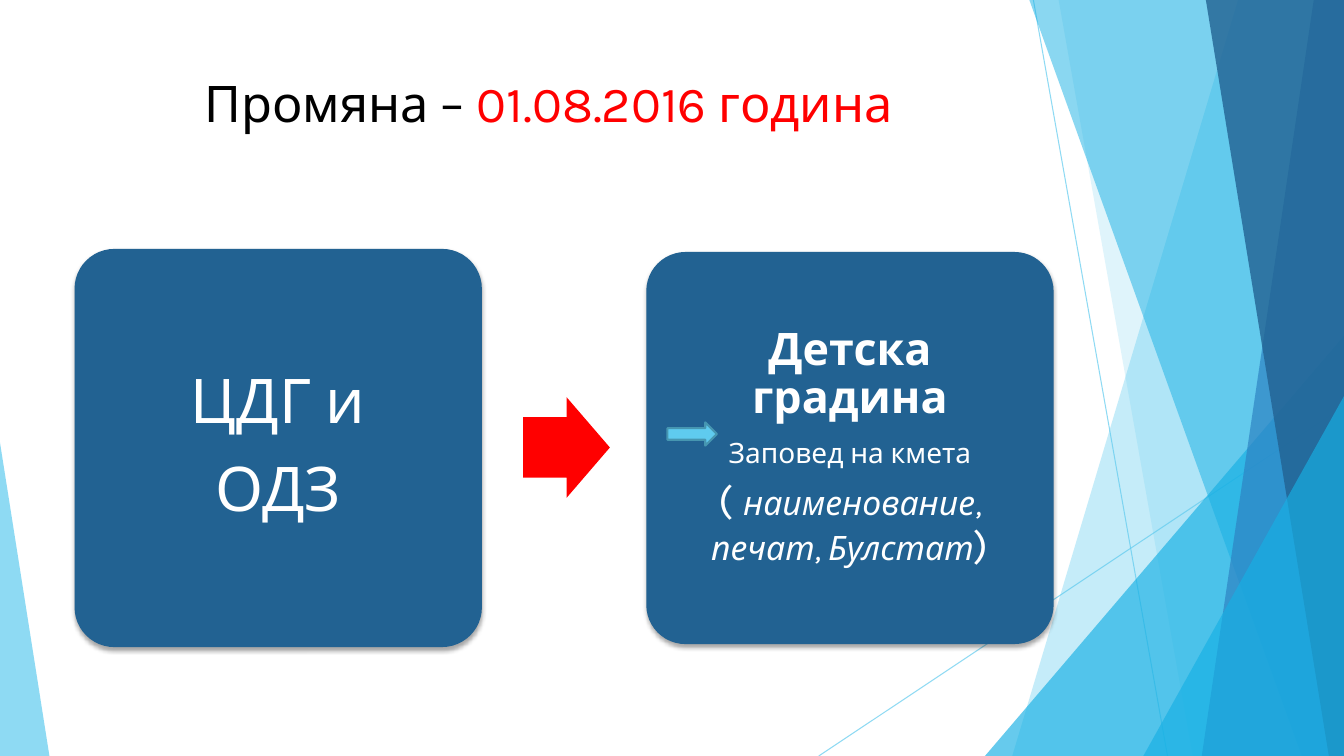
from dataclasses import dataclass
from typing import Optional

from lxml.etree import SubElement
from pptx import Presentation
from pptx.dml.color import RGBColor
from pptx.dml.fill import FillFormat
from pptx.enum.shapes import MSO_CONNECTOR as Connector, MSO_SHAPE as Preset
from pptx.enum.text import MSO_ANCHOR as Anchor, PP_ALIGN as Align
from pptx.oxml.ns import qn
from pptx.shapes.autoshape import Shape
from pptx.slide import Slide
from pptx.text.text import TextFrame
from pptx.util import Emu, Inches, Pt

WIDTH, HEIGHT = Inches(13.33), Inches(7.5)
FONT = "Karla"
SKY, AZURE, BLUE, NAVY = "5FCBEF", "17B0E4", "2E83C3", "226292"
RED, WHITE, BLACK = "FF0000", "FFFFFF", "000000"


@dataclass(frozen=True)
class Area:
    """Percentages of the slide's width and height."""
    left: float
    top: float
    width: float
    height: float

    def emu(self) -> tuple[Emu, Emu, Emu, Emu]:
        return across(self.left), down(self.top), across(self.width), down(self.height)


@dataclass(frozen=True)
class Ray:
    start: tuple[float, float]
    end: tuple[float, float]


@dataclass(frozen=True)
class Band:
    top_x: float
    bottom_x: float
    color: str
    alpha: int


@dataclass(frozen=True)
class Block:
    kind: Preset
    area: Area
    color: str
    adjustments: tuple[float, ...] = ()
    alpha: int = 100
    outline: Optional[str] = None


@dataclass(frozen=True)
class Words:
    text: str
    size: float
    color: str = WHITE
    bold: bool = False
    italic: bool = False


@dataclass(frozen=True)
class Card:
    area: Area
    inset: float
    paragraphs: list[list[Words]]


RAYS = [Ray((76.89, 0), (86.87, 100)), Ray((100, 53.73), (60.92, 100))]
FACETS = [
    Band(92.12, 75.32, SKY, 36),
    Band(78.77, 88.75, SKY, 20),
    Block(Preset.ISOSCELES_TRIANGLE, Area(73.29, 44.4, 26.71, 55.6), AZURE, (1,), 66),
    Band(76.59, 96.85, AZURE, 50),
    Band(97.75, 89.42, BLUE, 70),
    Band(89.72, 98.87, NAVY, 80),
    Block(Preset.ISOSCELES_TRIANGLE, Area(85.07, 52.4, 14.93, 47.6), AZURE, (1,), 66),
    Block(Preset.ISOSCELES_TRIANGLE, Area(0, 58.53, 3.68, 41.47), SKY, (0,), 70),
]
TITLE_AREA = Area(5.55, 8.93, 70.52, 19.2)
TITLE = [Words("Промяна – ", 36, BLACK), Words("01.08.2016 година", 36, RED)]
CARDS = [
    Card(Area(5.55, 32.93, 30.31, 52.67), 0.26,
         [[Words("ЦДГ и", 44)], [Words("ОДЗ", 44)]]),
    Card(Area(48.09, 33.33, 30.31, 51.87), 0.24,
         [[Words("Детска градина", 32, bold=True)],
          [Words("Заповед на кмета", 20)],
          [Words("( ", 30), Words("наименование, печат, Булстат", 24, italic=True),
           Words(")", 30)]]),
]
ARROWS = [
    Block(Preset.RIGHT_ARROW, Area(38.93, 52.53, 6.45, 13.33), RED, (0.6, 0.5)),
    Block(Preset.RIGHT_ARROW, Area(49.66, 55.87, 3.68, 3.07), SKY, outline="4696B1"),
]


def across(share: float) -> Emu:
    return Emu(round(WIDTH * share / 100))


def down(share: float) -> Emu:
    return Emu(round(HEIGHT * share / 100))


def rgb(color: str) -> RGBColor:
    return RGBColor.from_string(color)


def paint(fill: FillFormat, color: str, alpha: int = 100) -> None:
    fill.solid()
    fill.fore_color.rgb = rgb(color)
    if alpha < 100:
        tint = fill._xPr.find(qn("a:solidFill")).find(qn("a:srgbClr"))
        SubElement(tint, qn("a:alpha"), val=str(alpha * 1000))


def draw_ray(slide: Slide, ray: Ray) -> None:
    (x1, y1), (x2, y2) = ray.start, ray.end
    line = slide.shapes.add_connector(
        Connector.STRAIGHT, across(x1), down(y1), across(x2), down(y2))
    line.line.width = Pt(0.75)
    paint(line.line.fill, SKY, 70)
    SubElement(line._element.spPr, qn("a:effectLst"))


def draw_band(slide: Slide, band: Band) -> None:
    builder = slide.shapes.build_freeform(across(band.top_x), 0)
    builder.add_line_segments(
        [(WIDTH, 0), (WIDTH, HEIGHT), (across(band.bottom_x), HEIGHT)], close=True)
    facet = builder.convert_to_shape()
    facet.shadow.inherit = False
    paint(facet.fill, band.color, band.alpha)
    facet.line.fill.background()


def draw_block(slide: Slide, block: Block) -> Shape:
    shape = slide.shapes.add_shape(block.kind, *block.area.emu())
    shape.shadow.inherit = False
    for index, value in enumerate(block.adjustments):
        shape.adjustments[index] = value
    paint(shape.fill, block.color, block.alpha)
    if block.outline:
        paint(shape.line.fill, block.outline)
        shape.line.width = Pt(1.5)
    else:
        shape.line.fill.background()
    return shape


def cast_shadow(shape: Shape) -> None:
    effects = shape._element.spPr.find(qn("a:effectLst"))
    shadow = SubElement(effects, qn("a:outerShdw"), blurRad=str(Pt(3)),
                        dist=str(Pt(2)), dir="5400000", rotWithShape="0")
    tint = SubElement(shadow, qn("a:srgbClr"), val=BLACK)
    SubElement(tint, qn("a:alpha"), val="35000")


def write(frame: TextFrame, paragraphs: list[list[Words]], spacing: float) -> None:
    frame.word_wrap = True
    for index, pieces in enumerate(paragraphs):
        paragraph = frame.add_paragraph() if index else frame.paragraphs[0]
        paragraph.alignment = Align.CENTER
        paragraph.line_spacing = spacing
        if index < len(paragraphs) - 1:
            paragraph.space_after = Pt(0.35 * pieces[0].size)
        for piece in pieces:
            run = paragraph.add_run()
            run.text = piece.text
            run.font.name = FONT
            run.font.size = Pt(piece.size)
            run.font.bold = piece.bold
            run.font.italic = piece.italic
            run.font.color.rgb = rgb(piece.color)


def draw_card(slide: Slide, card: Card) -> None:
    shape = draw_block(slide, Block(Preset.ROUNDED_RECTANGLE, card.area, NAVY, (0.1,)))
    cast_shadow(shape)
    frame = shape.text_frame
    frame.vertical_anchor = Anchor.MIDDLE
    frame.margin_left = frame.margin_right = Inches(card.inset)
    frame.margin_top = frame.margin_bottom = Inches(card.inset)
    write(frame, card.paragraphs, 0.9)


def main() -> None:
    deck = Presentation()
    deck.slide_width, deck.slide_height = WIDTH, HEIGHT
    slide = deck.slides.add_slide(deck.slide_layouts[5])
    for ray in RAYS:
        draw_ray(slide, ray)
    for facet in FACETS:
        if isinstance(facet, Band):
            draw_band(slide, facet)
        else:
            draw_block(slide, facet)
    title = slide.shapes.title
    title.left, title.top, title.width, title.height = TITLE_AREA.emu()
    title.text_frame.vertical_anchor = Anchor.TOP
    write(title.text_frame, [TITLE], 1.0)
    for card in CARDS:
        draw_card(slide, card)
    for arrow in ARROWS:
        draw_block(slide, arrow)
    deck.save("out.pptx")


if __name__ == "__main__":
    main()
